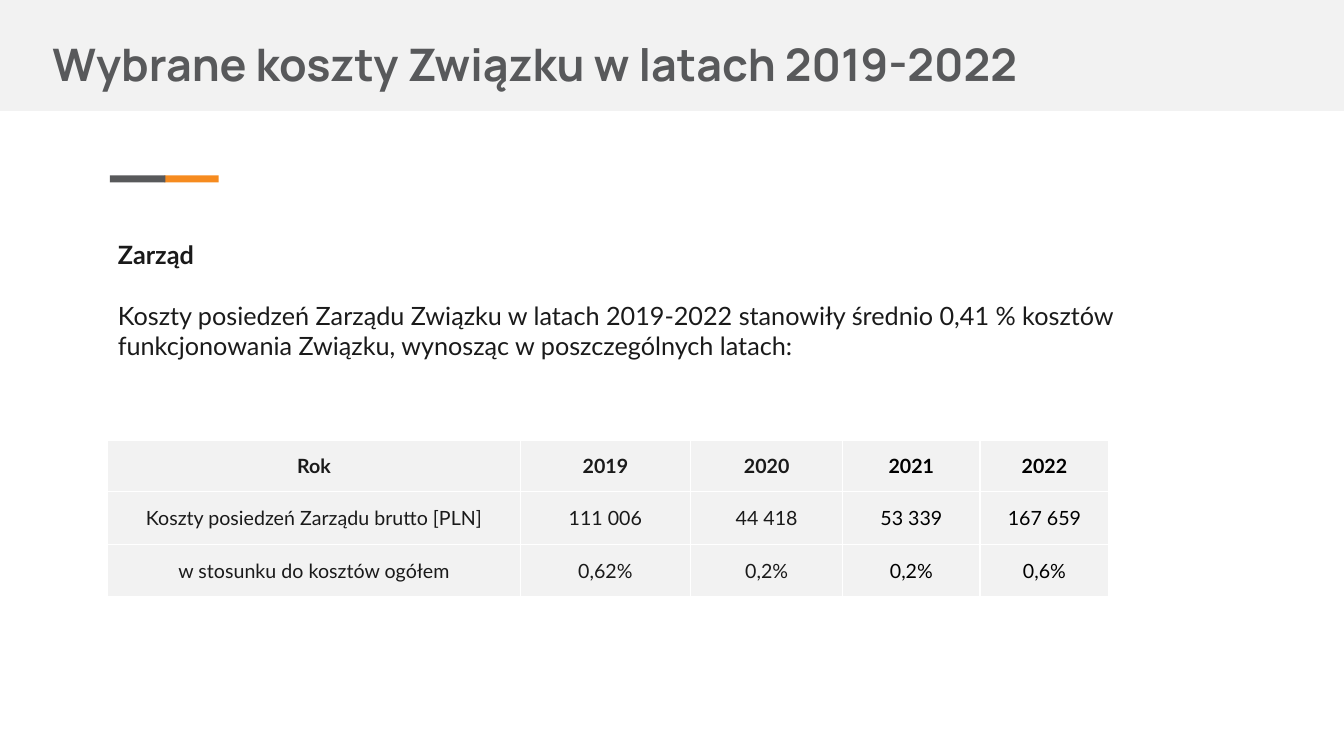
from lxml import etree
from pptx import Presentation
from pptx import util as u
from pptx.dml.color import RGBColor
from pptx.enum import shapes, text
from pptx.oxml import ns

LIGHT_GRAY = RGBColor(0xF2, 0xF2, 0xF2)
GRAY = RGBColor(0x58, 0x59, 0x5B)
ORANGE = RGBColor(0xF6, 0x8B, 0x1F)
INK = RGBColor(0x1A, 0x1A, 0x1A)
BLACK = RGBColor(0x00, 0x00, 0x00)
WHITE = RGBColor(0xFF, 0xFF, 0xFF)

COLUMN_WIDTHS = (4.09, 1.69, 1.51, 1.36, 1.28)
ROW_HEIGHTS = (0.51, 0.52, 0.52)
COSTS = (
    ("Rok", "2019", "2020", "2021", "2022"),
    ("Koszty posiedzeń Zarządu brutto [PLN]", "111 006", "44 418", "53 339", "167 659"),
    ("w stosunku do kosztów ogółem", "0,62%", "0,2%", "0,2%", "0,6%"),
)


def format_font(paragraph, name, size, color, bold=False):
    font = paragraph.font
    font.name = name
    font.size = u.Pt(size)
    font.bold = bold
    font.color.rgb = color


def add_bar(slide, left, top, width, height, color):
    bar = slide.shapes.add_shape(
        shapes.MSO_SHAPE.RECTANGLE,
        u.Inches(left), u.Inches(top), u.Inches(width), u.Inches(height))
    bar.shadow.inherit = False
    bar.fill.solid()
    bar.fill.fore_color.rgb = color
    bar.line.fill.background()


def set_title(slide, wording):
    title = slide.shapes.title
    title.left, title.top = u.Inches(0.42), u.Inches(0)
    title.width, title.height = u.Inches(11.21), u.Inches(1.11)
    frame = title.text_frame
    frame.margin_left = frame.margin_right = u.Inches(0.1)
    frame.margin_top = frame.margin_bottom = u.Inches(0.1)
    frame.vertical_anchor = text.MSO_ANCHOR.TOP
    frame.auto_size = text.MSO_AUTO_SIZE.NONE
    frame.text = wording
    paragraph = frame.paragraphs[0]
    paragraph.alignment = text.PP_ALIGN.LEFT
    paragraph.line_spacing = 1.5
    format_font(paragraph, "Manrope", 32, GRAY, bold=True)
    slide.shapes._spTree.append(title._element)


def add_introduction(slide, heading, wording):
    box = slide.shapes.add_textbox(
        u.Inches(1.07), u.Inches(2.32), u.Inches(11.81), u.Inches(1.31))
    frame = box.text_frame
    frame.word_wrap = True
    first = frame.paragraphs[0]
    first.text = heading
    format_font(first, "Lato", 18, INK, bold=True)
    second = frame.add_paragraph()
    second.text = wording
    second.space_before = u.Pt(22)
    format_font(second, "Lato", 18, INK)


def set_borders(cell, color, width):
    properties = cell._tc.get_or_add_tcPr()
    for position, side in enumerate(("a:lnL", "a:lnR", "a:lnT", "a:lnB")):
        line = etree.Element(ns.qn(side), w=str(u.Pt(width)))
        fill = etree.SubElement(line, ns.qn("a:solidFill"))
        etree.SubElement(fill, ns.qn("a:srgbClr"), val=str(color))
        properties.insert(position, line)


def format_cell(cell, wording, color, bold):
    cell.fill.solid()
    cell.fill.fore_color.rgb = LIGHT_GRAY
    set_borders(cell, WHITE, 1)
    cell.margin_left = cell.margin_right = u.Inches(0.03)
    cell.margin_top = cell.margin_bottom = 0
    cell.vertical_anchor = text.MSO_ANCHOR.MIDDLE
    cell.text = wording
    paragraph = cell.text_frame.paragraphs[0]
    paragraph.alignment = text.PP_ALIGN.CENTER
    format_font(paragraph, "Lato", 14, color, bold)


def add_cost_table(slide):
    table = slide.shapes.add_table(
        len(COSTS), len(COLUMN_WIDTHS), u.Inches(1.07), u.Inches(4.37),
        u.Inches(sum(COLUMN_WIDTHS)), u.Inches(sum(ROW_HEIGHTS))).table
    table.horz_banding = False
    for column, width in zip(table.columns, COLUMN_WIDTHS):
        column.width = u.Inches(width)
    for row_index, values in enumerate(COSTS):
        table.rows[row_index].height = u.Inches(ROW_HEIGHTS[row_index])
        for column_index, value in enumerate(values):
            color = BLACK if column_index >= 3 else INK
            format_cell(table.cell(row_index, column_index), value, color,
                        bold=row_index == 0)


def main():
    presentation = Presentation()
    presentation.slide_width = u.Inches(13.33)
    presentation.slide_height = u.Inches(7.5)
    slide = presentation.slides.add_slide(presentation.slide_layouts[5])

    add_bar(slide, 0, 0, 13.33, 1.1, LIGHT_GRAY)
    add_bar(slide, 1.63, 1.74, 0.54, 0.07, ORANGE)
    add_bar(slide, 1.09, 1.74, 0.55, 0.07, GRAY)
    add_introduction(
        slide, "Zarząd",
        "Koszty posiedzeń Zarządu Związku w latach 2019-2022 stanowiły średnio "
        "0,41 % kosztów funkcjonowania Związku, wynosząc w poszczególnych latach:")
    add_cost_table(slide)
    set_title(slide, "Wybrane koszty Związku w latach 2019-2022")
    presentation.save("out.pptx")


if __name__ == "__main__":
    main()
